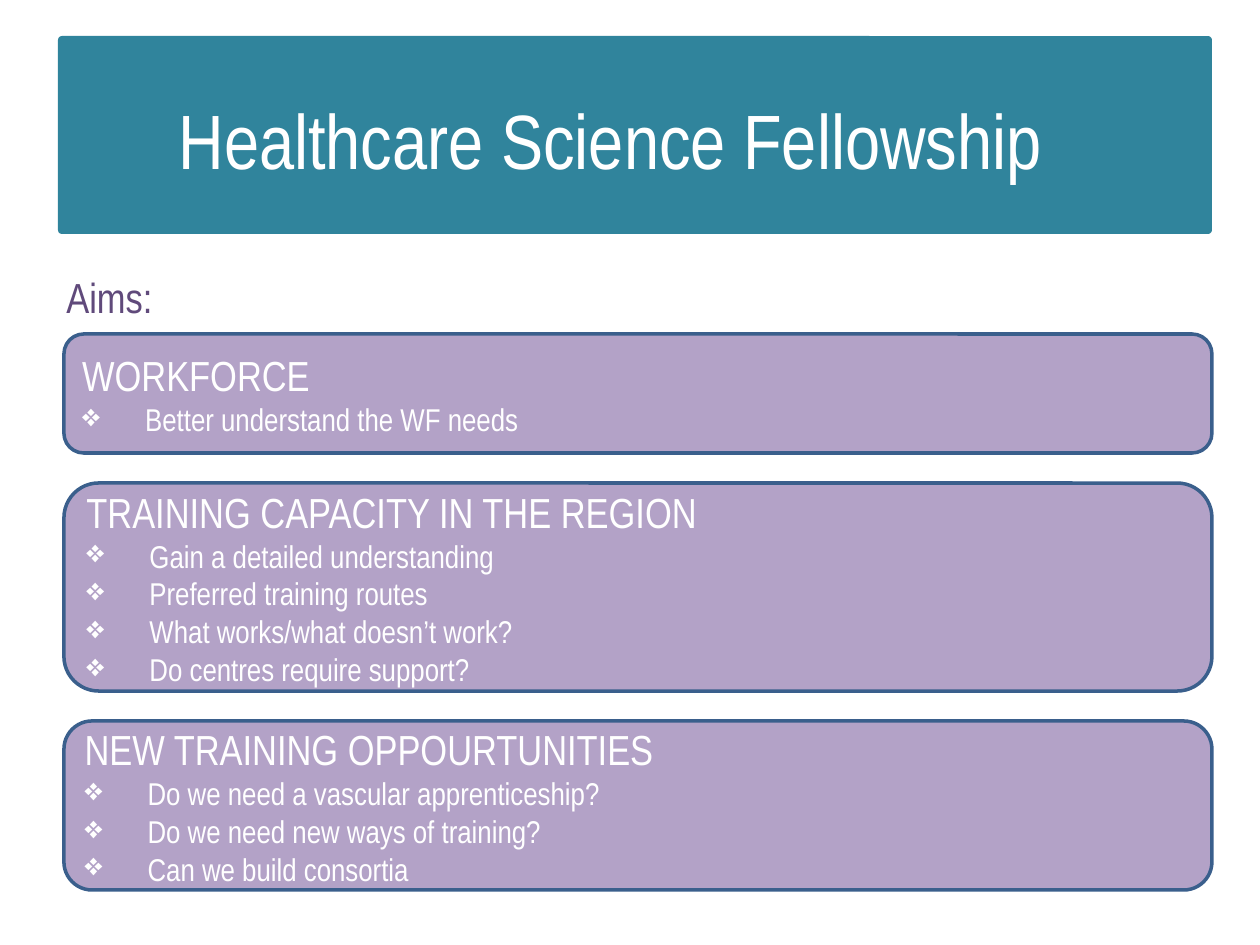
from dataclasses import dataclass

from lxml import etree
from pptx import Presentation
from pptx.dml.color import RGBColor
from pptx.enum.shapes import MSO_SHAPE
from pptx.enum.text import MSO_ANCHOR, PP_ALIGN
from pptx.oxml.ns import qn
from pptx.util import Emu, Pt

ROUNDED = MSO_SHAPE.ROUNDED_RECTANGLE
MIDDLE, TOP = MSO_ANCHOR.MIDDLE, MSO_ANCHOR.TOP
LEFT, CENTER = PP_ALIGN.LEFT, PP_ALIGN.CENTER
PX_PER_INCH = 126


@dataclass(frozen=True)
class Theme:
    font: str = "Arial Narrow"
    banner: str = "30849C"
    card: str = "B3A2C7"
    border: str = "3A5F8C"
    light: str = "FFFFFF"
    accent: str = "604A7B"
    title_size: int = 44
    heading_size: int = 24
    bullet_size: int = 18
    border_width: int = 2


THEME = Theme()

# Card layout, in px
CARD_LEFT, CARD_TOP, CARD_WIDTH, CARD_GAP = 64, 334, 1148, 30
BULLET_INDENT = 63

# Height, heading and bullets of each card
CARDS = [
    (119, "WORKFORCE", ["Better understand the WF needs"]),
    (208, "TRAINING CAPACITY IN THE REGION", [
        "Gain a detailed understanding",
        "Preferred training routes",
        "What works/what doesn’t work?",
        "Do centres require support?",
    ]),
    (169, "NEW TRAINING OPPOURTUNITIES", [
        "Do we need a vascular apprenticeship?",
        "Do we need new ways of training?",
        "Can we build consortia",
    ]),
]


def px(value):
    return Emu(value * 914400 // PX_PER_INCH)


def color(code):
    return RGBColor.from_string(code)


def add_span(para, text, size, code):
    span = para.add_run()
    span.text = text
    span.font.name = THEME.font
    span.font.size = Pt(size)
    span.font.color.rgb = color(code)


def add_bullet(para):
    props = para._p.get_or_add_pPr()
    props.set("marL", str(px(BULLET_INDENT)))
    props.set("indent", str(-px(BULLET_INDENT)))
    etree.SubElement(props, qn("a:buChar")).set("char", "❖")


def add_panel(page, bounds, fill):
    panel = page.shapes.add_shape(ROUNDED, *map(px, bounds))
    panel.shadow.inherit = False
    panel.fill.solid()
    panel.fill.fore_color.rgb = color(fill)
    panel.line.fill.background()
    return panel


def add_label(page, bounds, text, size, code, align, anchor):
    box = page.shapes.add_textbox(*map(px, bounds))
    frame = box.text_frame
    frame.word_wrap = True
    frame.vertical_anchor = anchor
    para = frame.paragraphs[0]
    para.alignment = align
    add_span(para, text, size, code)
    return para


def add_card(page, top, height, heading, bullets):
    card = add_panel(page, (CARD_LEFT, top, CARD_WIDTH, height), THEME.card)
    card.line.color.rgb = color(THEME.border)
    card.line.width = Pt(THEME.border_width)
    frame = card.text_frame
    frame.word_wrap = True
    frame.vertical_anchor = MIDDLE
    para = frame.paragraphs[0]
    para.alignment = LEFT
    add_span(para, heading, THEME.heading_size, THEME.light)
    for text in bullets:
        para = frame.add_paragraph()
        para.alignment = LEFT
        add_bullet(para)
        add_span(para, text, THEME.bullet_size, THEME.light)


def main():
    deck = Presentation()
    deck.slide_width, deck.slide_height = px(1260), px(945)
    page = deck.slides.add_slide(deck.slide_layouts[6])

    # Title banner
    banner = add_panel(page, (58, 36, 1154, 198), THEME.banner)
    banner.adjustments[0] = 0.02
    add_label(page, (84, 37, 1071, 203), "Healthcare Science Fellowship ",
              THEME.title_size, THEME.light, CENTER, MIDDLE)

    # Aims label
    aims = add_label(page, (54, 265, 1131, 59), "Aims:",
                     THEME.heading_size, THEME.accent, LEFT, TOP)
    aims.space_before = Pt(2)

    # Aim cards, stacked with equal gaps
    top = CARD_TOP
    for height, heading, bullets in CARDS:
        add_card(page, top, height, heading, bullets)
        top += height + CARD_GAP

    deck.save("out.pptx")


if __name__ == "__main__":
    main()
